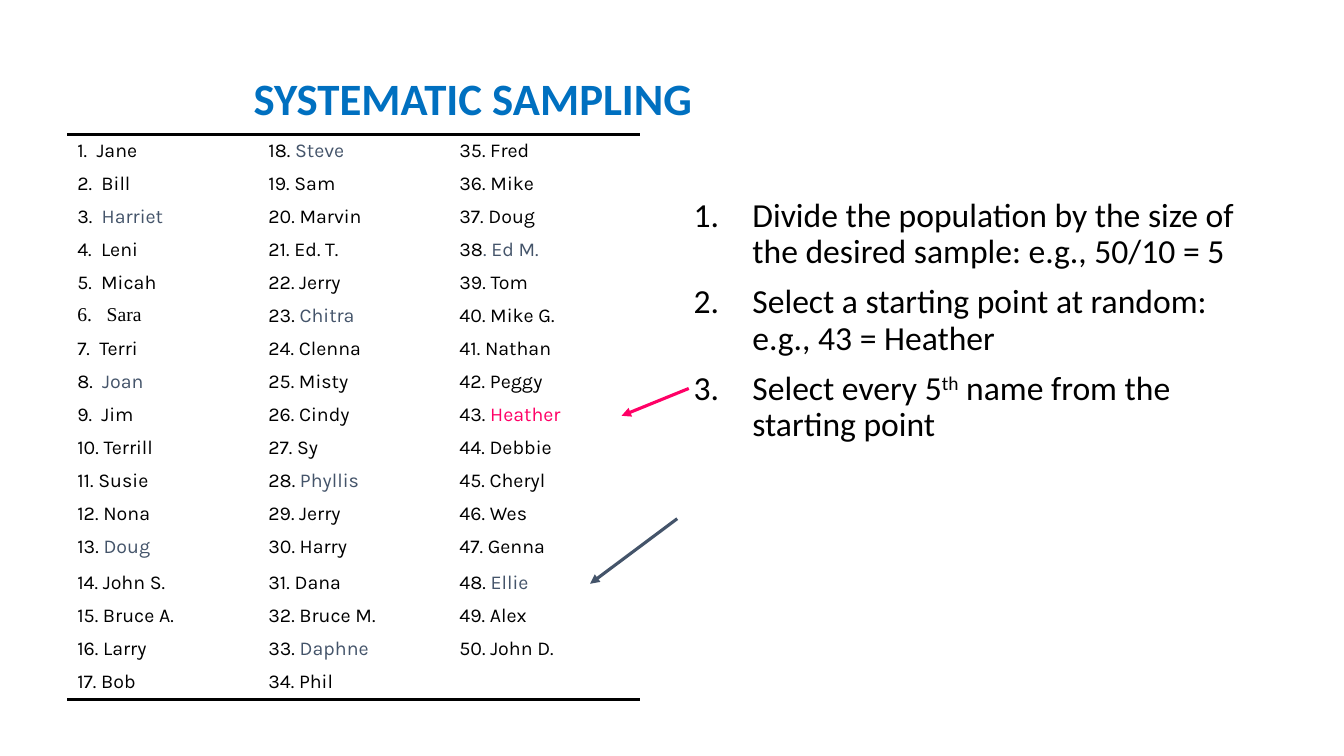
import lxml.etree
import pptx
import pptx.dml.color
import pptx.enum.shapes
import pptx.enum.text
import pptx.oxml.ns
import pptx.util

PX = 9525  # EMU per px, 96 px to the inch
THEME = {
    "ink": "000000", "title": "0070C0", "sampled": "44546A", "start": "FF0066",
    "text_font": "Calibri", "list_font": "Karla", "odd_font": "Times New Roman",
    "title_size": 32, "step_size": 24, "name_size": 14, "rule": 2.25,
}
NO_STYLE = "{2D5ABB26-0587-4C30-8999-92F81FD0307C}"
NAMES = (
    "Jane,Bill,Harriet,Leni,Micah,Sara,Terri,Joan,Jim,Terrill,Susie,Nona,Doug,"
    "John S.,Bruce A.,Larry,Bob,Steve,Sam,Marvin,Ed. T.,Jerry,Chitra,Clenna,"
    "Misty,Cindy,Sy,Phyllis,Jerry,Harry,Dana,Bruce M.,Daphne,Phil,Fred,Mike,"
    "Doug,Ed M.,Tom,Mike G.,Nathan,Peggy,Heather,Debbie,Cheryl,Wes,Genna,"
    "Ellie,Alex,John D."
).split(",")
ROWS, COLUMNS = 17, 3
START, INTERVAL = 43, 5
ODD_NUMBER = 6
STEPS = [
    ["Divide the population by the size of the desired sample: e.g., 50/10 = 5"],
    ["Select a starting point at random: e.g., 43 = Heather"],
    ["Select every 5", "th", " name from the starting point"],
]


def emu(*lengths):
    return [pptx.util.Emu(length * PX) for length in lengths]


def rgb(color):
    return pptx.dml.color.RGBColor.from_string(THEME[color])


def add_xml(parent, tag, **attributes):
    return lxml.etree.SubElement(parent, pptx.oxml.ns.qn(tag), attributes)


def set_all(target, formats):
    for attribute, value in formats.items():
        setattr(target, attribute, value)


def add_run(paragraph, text, size, font="text_font", color="ink", bold=False):
    run = paragraph.add_run()
    run.text = text
    set_all(run.font, {"name": THEME[font], "size": pptx.util.Pt(THEME[size]), "bold": bold})
    run.font.color.rgb = rgb(color)
    return run


def place(placeholder, box):
    set_all(placeholder, dict(zip(("left", "top", "width", "height"), emu(*box))))


def build_heading(slide, box):
    heading = slide.shapes.title
    place(heading, box)
    set_all(heading.text_frame, {
        "word_wrap": True,
        "vertical_anchor": pptx.enum.text.MSO_ANCHOR.MIDDLE,
        "auto_size": pptx.enum.text.MSO_AUTO_SIZE.NONE,
    })
    line = heading.text_frame.paragraphs[0]
    set_all(line, {"alignment": pptx.enum.text.PP_ALIGN.LEFT, "line_spacing": 0.9})
    add_run(line, "SYSTEMATIC SAMPLING", "title_size", color="title", bold=True)


def build_steps(slide, box):
    steps = slide.placeholders[1]
    place(steps, box)
    frame = steps.text_frame
    set_all(frame, {"word_wrap": True, "auto_size": pptx.enum.text.MSO_AUTO_SIZE.NONE})
    indent = 56 * PX
    for index, parts in enumerate(STEPS):
        step = frame.add_paragraph() if index else frame.paragraphs[0]
        set_all(step, {"line_spacing": 0.9, "space_before": pptx.util.Pt(10)})
        # Automatic numbering with a hanging indent
        numbering = step._p.get_or_add_pPr()
        numbering.set("marL", str(indent))
        numbering.set("indent", str(-indent))
        add_xml(add_xml(numbering, "a:buClr"), "a:srgbClr", val=THEME["ink"])
        add_xml(numbering, "a:buFont", typeface="+mj-lt")
        add_xml(numbering, "a:buAutoNum", type="arabicPeriod")
        for part in parts:
            run = add_run(step, part, "step_size")
            if part == "th":
                run.font._element.set("baseline", "30000")


def add_rule(cell, edge):
    borders = cell._tc.get_or_add_tcPr()
    rule = add_xml(borders, edge, w=str(pptx.util.Pt(THEME["rule"])))
    add_xml(add_xml(rule, "a:solidFill"), "a:srgbClr", val=THEME["ink"])
    borders.insert(0, rule)


def write_person(line, number):
    name = NAMES[number - 1]
    font = "odd_font" if number == ODD_NUMBER else "list_font"
    gap = " " * (3 if number == ODD_NUMBER else 2 if number < 10 else 1)
    label = f"{number}.{gap}"
    if number % INTERVAL != START % INTERVAL:
        add_run(line, label + name, "name_size", font)
        return
    if number == 38:  # its dot is coloured with the name
        label, name = "38", ". " + name
    add_run(line, label, "name_size", font)
    add_run(line, name, "name_size", font, "start" if number == START else "sampled")


def build_population(slide, box):
    left, top, width, row_height = box
    table = slide.shapes.add_table(
        ROWS, COLUMNS, *emu(left, top, width, row_height * ROWS)).table
    set_all(table, {"first_row": False, "horz_banding": False})
    table._tbl.tblPr.find(pptx.oxml.ns.qn("a:tableStyleId")).text = NO_STYLE
    table.rows[12].height = emu(row_height + 10)[0]
    for column in range(COLUMNS):
        for row in range(ROWS):
            cell = table.cell(row, column)
            cell.fill.background()
            line = cell.text_frame.paragraphs[0]
            number = column * ROWS + row + 1
            if number <= len(NAMES):
                write_person(line, number)
            else:
                add_xml(line._p, "a:endParaRPr", sz=str(THEME["name_size"] * 100))
        # Rules above and below the list
        add_rule(table.cell(0, column), "a:lnT")
        add_rule(table.cell(ROWS - 1, column), "a:lnB")


def build_arrow(slide, ends, color):
    arrow = slide.shapes.add_connector(
        pptx.enum.shapes.MSO_CONNECTOR.STRAIGHT, *emu(*ends))
    arrow.line.color.rgb = rgb(color)
    arrow.line.width = pptx.util.Pt(THEME["rule"])
    add_xml(arrow.line._get_or_add_ln(), "a:tailEnd", type="triangle")
    add_xml(arrow._element.spPr, "a:effectLst")


def main():
    deck = pptx.Presentation()
    set_all(deck, dict(zip(("slide_width", "slide_height"), emu(1280, 720))))
    slide = deck.slides.add_slide(deck.slide_layouts[1])
    build_steps(slide, (651, 184, 534, 440))
    build_heading(slide, (232, 64, 816, 64))
    build_population(slide, (64, 128, 546, 25))
    # Arrows to the starting point and to the next sampled name
    build_arrow(slide, (656, 370, 592, 396), "start")
    build_arrow(slide, (645, 494, 562, 556), "sampled")
    deck.save("out.pptx")


if __name__ == "__main__":
    main()
